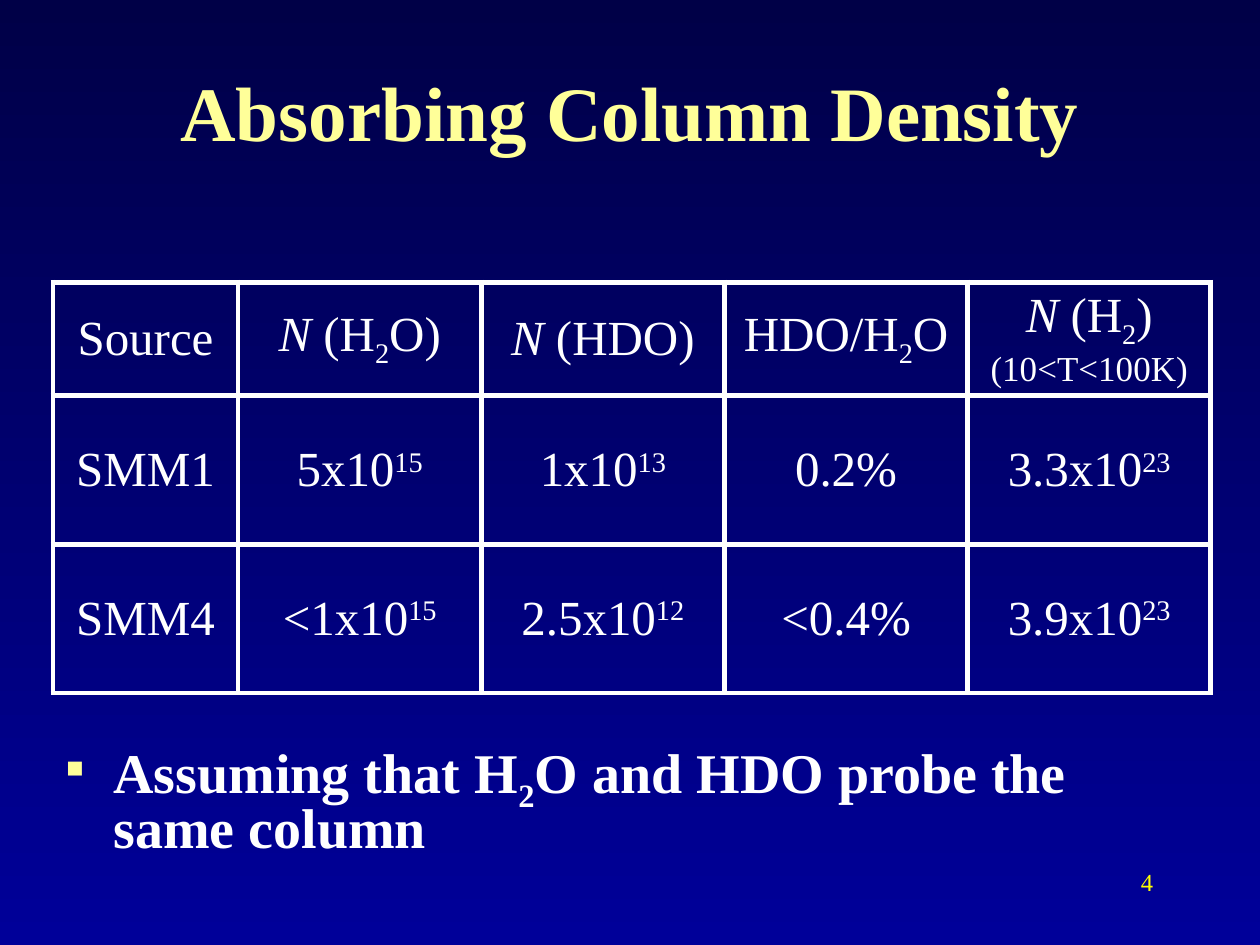
from lxml import etree
from pptx import Presentation
from pptx.dml.color import RGBColor
from pptx.enum.text import MSO_ANCHOR, MSO_AUTO_SIZE, PP_ALIGN
from pptx.oxml.ns import qn
from pptx.util import Inches, Pt

CENTER, RIGHT = PP_ALIGN.CENTER, PP_ALIGN.RIGHT
MIDDLE, TOP = MSO_ANCHOR.MIDDLE, MSO_ANCHOR.TOP
NO_FIT = MSO_AUTO_SIZE.NONE
COLORS = {"top": "000047", "bottom": "000099", "title": "FFFF99",
          "text": "FFFFFF", "number": "FFFF00"}
BASELINES = {"_": "-25000", "^": "30000"}


def write(para, markup, size, color, bold=False):
    """Fill a paragraph with spans split at |: * italic, _ subscript, ^ superscript, ~ small."""
    para.font.name = "Times New Roman"
    para.font.size = Pt(size)
    para.font.bold = bold
    para.font.color.rgb = RGBColor.from_string(COLORS[color])
    for piece in markup.split("|"):
        span = para.add_run()
        span.text = piece.lstrip("*_^~")
        if piece[0] == "*":
            span.font.italic = True
        elif piece[0] == "~":
            span.font.size = Pt(20)
        elif piece[0] in BASELINES:
            span._r.get_or_add_rPr().set("baseline", BASELINES[piece[0]])


def add_borders(cell, color, width):
    properties = cell._tc.get_or_add_tcPr()
    for side in ("lnL", "lnR", "lnT", "lnB"):
        line = etree.SubElement(properties, qn(f"a:{side}"), w=str(Pt(width)))
        fill = etree.SubElement(line, qn("a:solidFill"))
        etree.SubElement(fill, qn("a:srgbClr"), val=COLORS[color])


deck = Presentation()
deck.slide_width, deck.slide_height = Inches(10), Inches(7.5)
page = deck.slides.add_slide(deck.slide_layouts[1])

background = page.background.fill
background.gradient()
background.gradient_angle = 270
for stop, name in zip(background.gradient_stops, ("top", "bottom")):
    stop.color.rgb = RGBColor.from_string(COLORS[name])

# Title
title = page.shapes.title
title.left, title.top = Inches(0.75), Inches(0.25)
title.width, title.height = Inches(8.5), Inches(1.25)
title.text_frame.auto_size = NO_FIT
title.text_frame.vertical_anchor = MIDDLE
heading = title.text_frame.paragraphs[0]
heading.alignment = CENTER
write(heading, "Absorbing Column Density", 44, "title", bold=True)

# Assumption below the table
body = page.placeholders[1]
body.left, body.top = Inches(0.42), Inches(5.86)
body.width, body.height = Inches(9.19), Inches(1.47)
body.text_frame.auto_size = NO_FIT
body.text_frame.vertical_anchor = TOP
assumption = body.text_frame.paragraphs[0]
assumption.line_spacing = 0.8
assumption.space_before = Pt(0)
properties = assumption._p.get_or_add_pPr()
properties.set("marL", str(Inches(0.38)))
properties.set("indent", str(-Inches(0.38)))
bullet_color = etree.SubElement(properties, qn("a:buClr"))
etree.SubElement(bullet_color, qn("a:srgbClr"), val=COLORS["title"])
etree.SubElement(properties, qn("a:buFont"), typeface="Times New Roman")
etree.SubElement(properties, qn("a:buChar"), char="▪")
write(assumption, "Assuming that H|_2|O and HDO probe the same column", 32, "text", bold=True)

# Column densities
ROWS = [
    ["Source", "*N| (H|_2|O)", "*N| (HDO)", "HDO/H|_2|O", "*N| (H|_2|) |~(10<T<100K)"],
    ["SMM1", "5x10|^15", "1x10|^13", "0.2%", "3.3x10|^23"],
    ["SMM4", "<1x10|^15", "2.5x10|^12", "<0.4%", "3.9x10|^23"],
]
WIDTHS = [1.47] + [1.93] * 4
HEIGHTS = [0.9, 1.18, 1.18]
table = page.shapes.add_table(len(ROWS), len(WIDTHS), Inches(0.42), Inches(2.24),
                              Inches(sum(WIDTHS)), Inches(sum(HEIGHTS))).table
table.first_row = table.horz_banding = False
for column, width in zip(table.columns, WIDTHS):
    column.width = Inches(width)
for row, height, entries in zip(table.rows, HEIGHTS, ROWS):
    row.height = Inches(height)
    for cell, entry in zip(row.cells, entries):
        add_borders(cell, "text", 3)
        cell.fill.background()
        cell.vertical_anchor = MIDDLE
        para = cell.text_frame.paragraphs[0]
        para.alignment = CENTER
        write(para, entry, 28, "text")

# Page number
box = page.shapes.add_textbox(Inches(7.17), Inches(6.83), Inches(2.08), Inches(0.5))
box.text_frame.word_wrap = True
number = box.text_frame.paragraphs[0]
number.alignment = RIGHT
write(number, "4", 14, "number")

deck.save("out.pptx")
